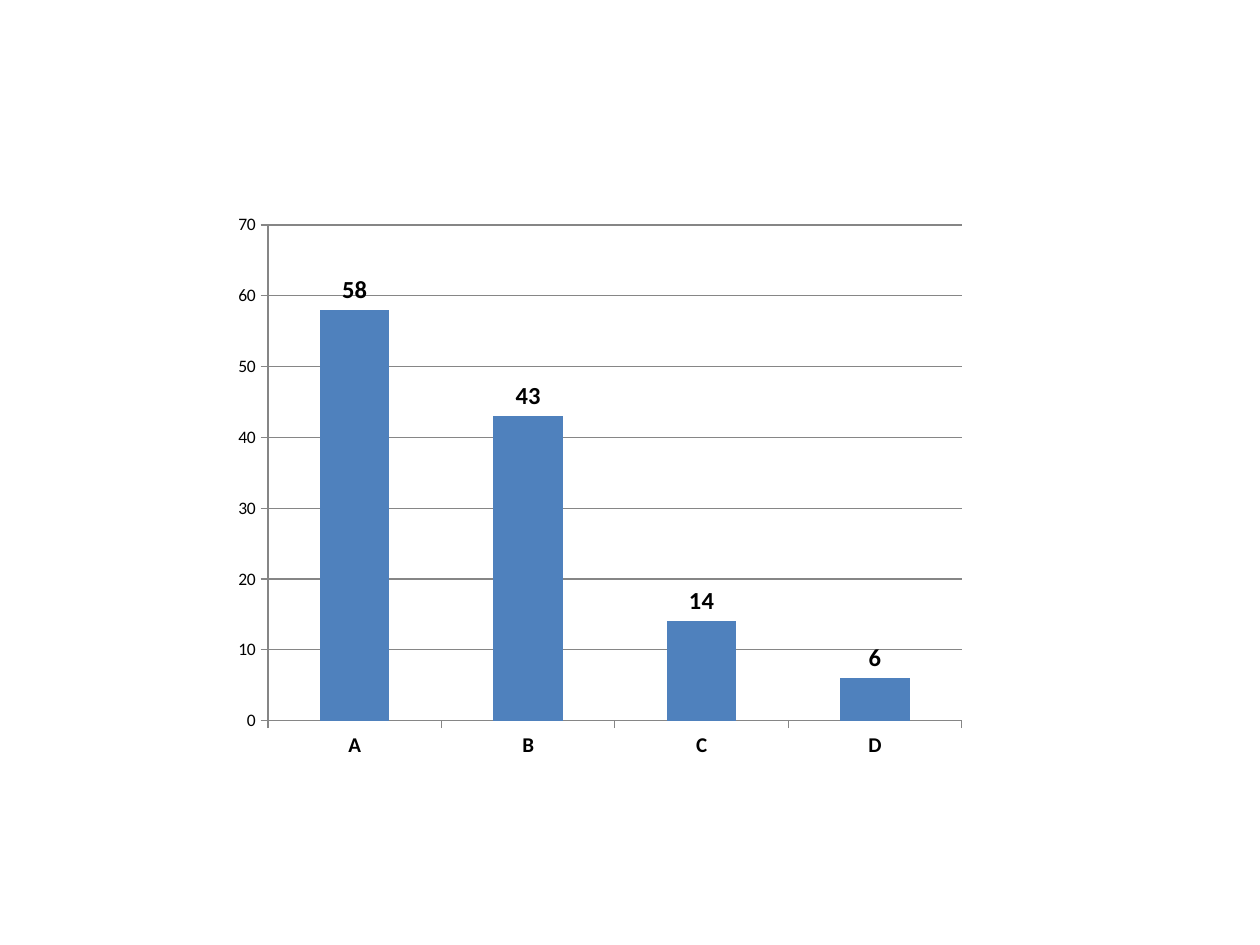
from dataclasses import dataclass

from pptx import Presentation
from pptx.chart.data import CategoryChartData
from pptx.dml.color import RGBColor
from pptx.enum.chart import XL_CHART_TYPE, XL_LABEL_POSITION, XL_TICK_MARK
from pptx.util import Cm, Pt

COLUMN = XL_CHART_TYPE.COLUMN_CLUSTERED
OUTSIDE_END = XL_LABEL_POSITION.OUTSIDE_END
TICK_OUT = XL_TICK_MARK.OUTSIDE

CATEGORIES = ["A", "B", "C", "D"]
SERIES_NAME = "Series 1"
VALUES = [58, 43, 14, 6]
SCALE_MAX, SCALE_STEP = 70, 10
CHART_BOX = (4.5, 4.11, 15.19, 11.4)


@dataclass(frozen=True)
class Theme:
    font: str = "Calibri"
    text: RGBColor = RGBColor(0x00, 0x00, 0x00)
    bar: RGBColor = RGBColor(0x4F, 0x81, 0xBD)
    line: RGBColor = RGBColor(0x86, 0x86, 0x86)
    base_size: int = 10
    category_size: int = 12
    label_size: int = 14


THEME = Theme()


def set_font(font, size, bold=False):
    font.name = THEME.font
    font.size = Pt(size)
    font.bold = bold
    font.color.rgb = THEME.text


def set_line(line):
    line.color.rgb = THEME.line
    line.width = Pt(0.75)


def style_axes(chart):
    for axis in (chart.category_axis, chart.value_axis):
        axis.major_tick_mark = TICK_OUT
        set_line(axis.format.line)
    set_font(chart.category_axis.tick_labels.font, THEME.category_size, bold=True)

    scale = chart.value_axis
    scale.minimum_scale, scale.maximum_scale = 0, SCALE_MAX
    scale.major_unit = SCALE_STEP
    scale.has_major_gridlines = True
    set_line(scale.major_gridlines.format.line)


def style_columns(plot):
    plot.gap_width = 150
    plot.vary_by_categories = False
    fill = plot.series[0].format.fill
    fill.solid()
    fill.fore_color.rgb = THEME.bar

    plot.has_data_labels = True
    labels = plot.data_labels
    labels.show_value = True
    labels.position = OUTSIDE_END
    set_font(labels.font, THEME.label_size, bold=True)


def main():
    prs = Presentation()
    prs.slide_width, prs.slide_height = Cm(25.4), Cm(19.05)
    s = prs.slides.add_slide(prs.slide_layouts[6])

    data = CategoryChartData()
    data.categories = CATEGORIES
    data.add_series(SERIES_NAME, VALUES)
    box = [Cm(length) for length in CHART_BOX]
    chart = s.shapes.add_chart(COLUMN, *box, data).chart
    chart.has_title = False
    chart.has_legend = False
    set_font(chart.font, THEME.base_size)
    style_axes(chart)
    style_columns(chart.plots[0])

    prs.save("out.pptx")


if __name__ == "__main__":
    main()
